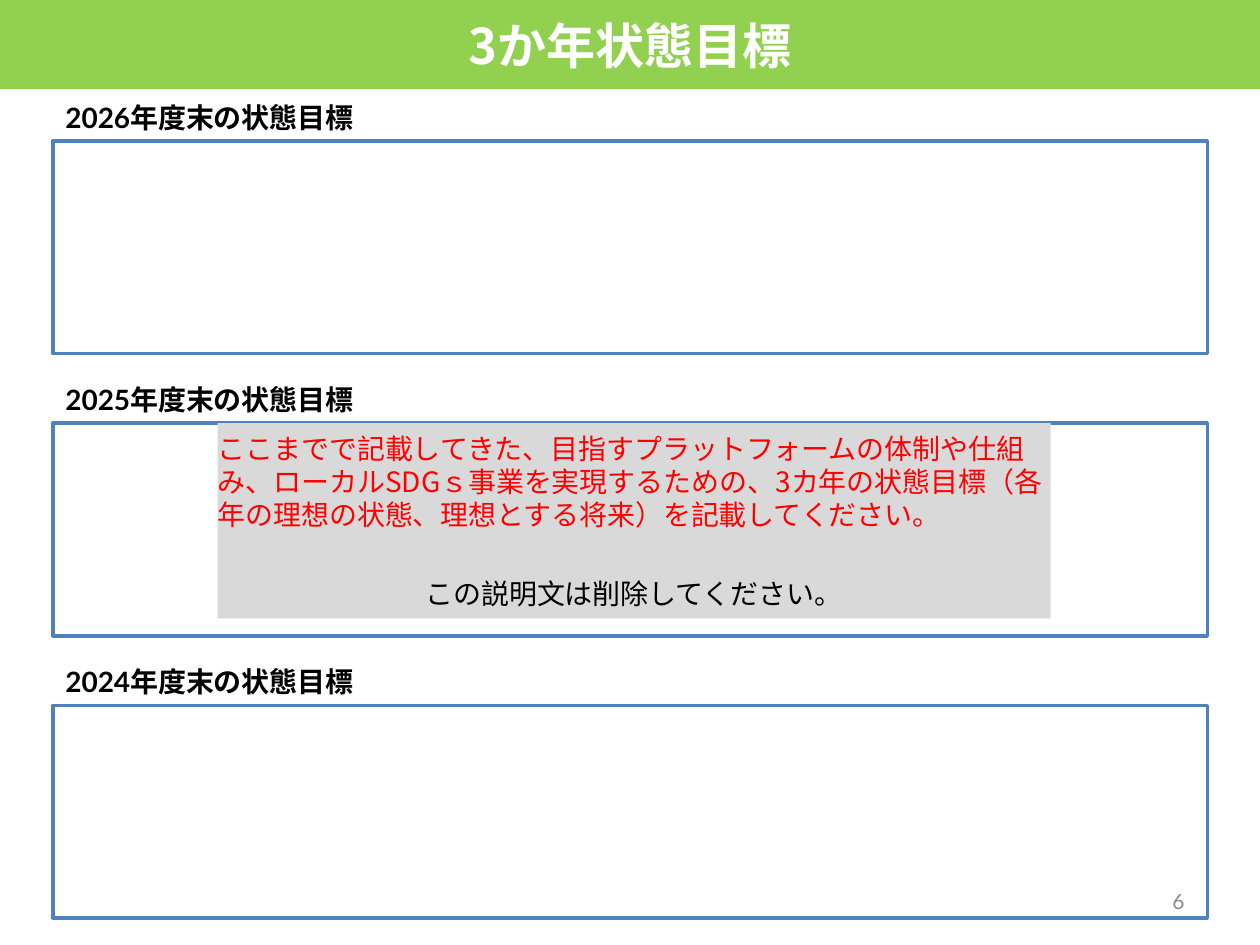
from dataclasses import dataclass

from lxml import etree
from pptx import Presentation
from pptx.dml.color import RGBColor
from pptx.enum.shapes import MSO_SHAPE
from pptx.enum.text import MSO_ANCHOR, PP_ALIGN
from pptx.oxml.ns import qn
from pptx.util import Cm, Pt

RECT = MSO_SHAPE.RECTANGLE
MIDDLE = MSO_ANCHOR.MIDDLE
LEFT, CENTER, RIGHT = PP_ALIGN.LEFT, PP_ALIGN.CENTER, PP_ALIGN.RIGHT


@dataclass(frozen=True)
class Theme:
    green: str = "92D050"
    blue: str = "4F81BD"
    white: str = "FFFFFF"
    black: str = "000000"
    red: str = "FF0000"
    panel: str = "D9D9D9"
    gray: str = "8C8C8C"
    latin: str = "Lato"
    cjk: str = "Noto Sans CJK JP"
    title: int = 28
    body: int = 16
    number: int = 12


T = Theme()


def add_rect(s, x, y, w, h, fill):
    sp = s.shapes.add_shape(RECT, Cm(x), Cm(y), Cm(w), Cm(h))
    sp.shadow.inherit = False
    sp.fill.solid()
    sp.fill.fore_color.rgb = RGBColor.from_string(fill)
    sp.line.fill.background()
    tf = sp.text_frame
    tf.word_wrap = True
    tf.vertical_anchor = MIDDLE
    tf.margin_left = tf.margin_top = tf.margin_right = tf.margin_bottom = 0
    return sp


def add_run(p, text, size, color, font, bold=False, align=LEFT):
    p.alignment = align
    r = p.add_run()
    r.text = text
    r.font.size = Pt(size)
    r.font.bold = bold
    r.font.color.rgb = RGBColor.from_string(color)
    r.font.name = font
    etree.SubElement(r.font._element, qn("a:ea"), typeface=T.cjk)


prs = Presentation()
prs.slide_width, prs.slide_height = Cm(25.4), Cm(19.05)
s = prs.slides.add_slide(prs.slide_layouts[6])

sp = add_rect(s, 0, 0, 25.4, 1.8, T.green)
add_run(sp.text_frame.paragraphs[0], "3か年状態目標", T.title, T.white, T.cjk, True, CENTER)

for i, year in enumerate((2026, 2025, 2024)):
    top = 1.9 + 5.69 * i
    tf = s.shapes.add_textbox(Cm(1.07), Cm(top), Cm(12.85), Cm(0.94)).text_frame
    tf.word_wrap = True
    add_run(tf.paragraphs[0], f"{year}年度末の状態目標", T.body, T.black, T.latin, True)
    sp = add_rect(s, 1.07, top + 0.94, 23.27, 4.29, T.white)
    sp.line.color.rgb = RGBColor.from_string(T.blue)
    sp.line.width = Pt(2)

tf = s.shapes.add_textbox(Cm(18.21), Cm(17.65), Cm(5.92), Cm(1.02)).text_frame
tf.word_wrap = True
tf.vertical_anchor = MIDDLE
add_run(tf.paragraphs[0], "6", T.number, T.gray, T.latin, align=RIGHT)

tf = add_rect(s, 4.39, 8.53, 16.79, 3.94, T.panel).text_frame
p = tf.paragraphs[0]
p.line_spacing = Pt(19)
add_run(
    p,
    "ここまでで記載してきた、目指すプラットフォームの体制や仕組み、ローカルSDGｓ事業を"
    "実現するための、3カ年の状態目標（各年の理想の状態、理想とする将来）を記載してください。",
    T.body, T.red, T.cjk,
)
p = tf.add_paragraph()
p.line_spacing = Pt(19)
p.space_before = Pt(26)
add_run(p, "この説明文は削除してください。", T.body, T.black, T.cjk, align=CENTER)

prs.save("out.pptx")
